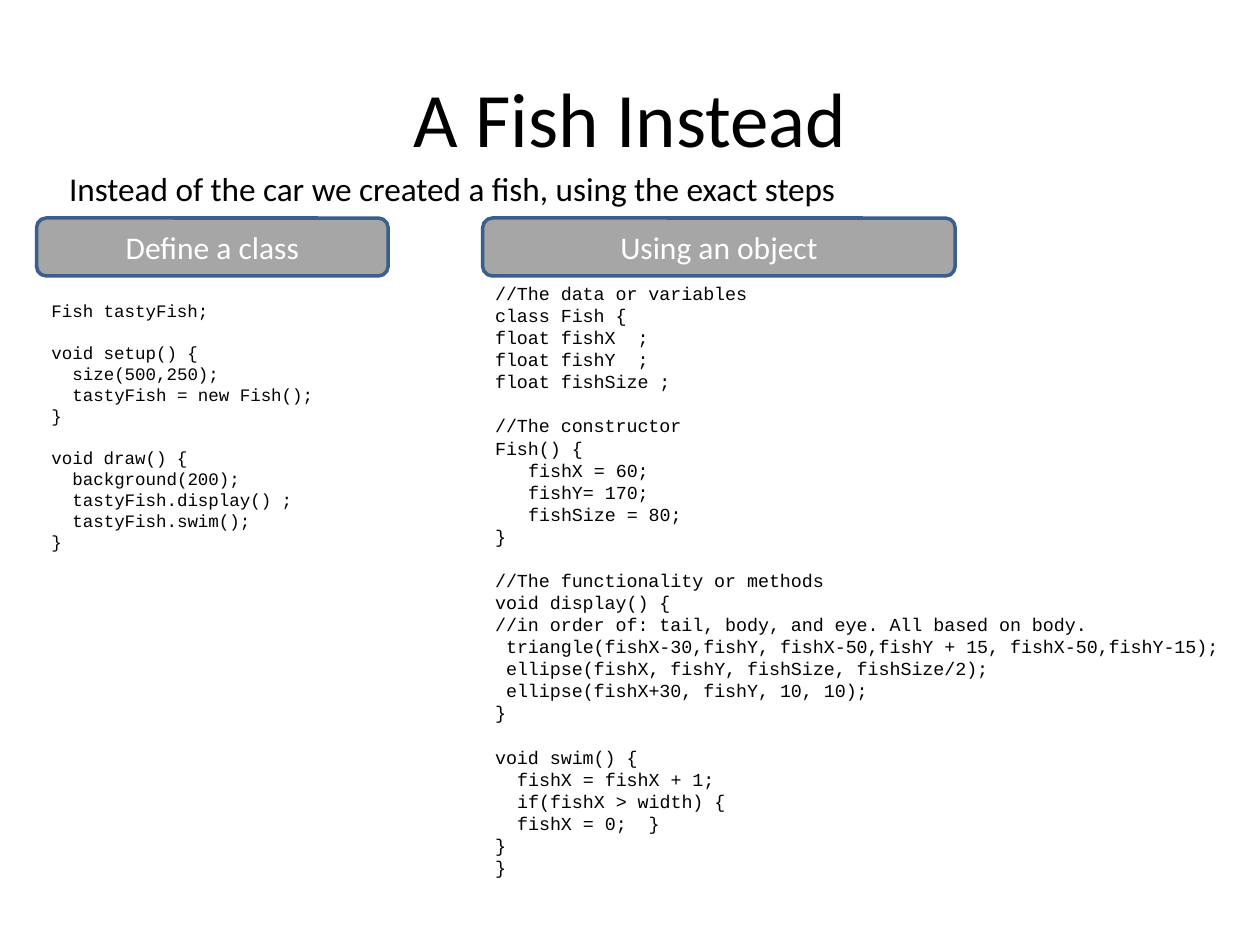
from pptx import Presentation
from pptx.dml.color import RGBColor
from pptx.enum.shapes import MSO_SHAPE
from pptx.enum.text import MSO_ANCHOR, PP_ALIGN
from pptx.util import Pt

ROUNDED = MSO_SHAPE.ROUNDED_RECTANGLE
CENTER, LEFT = PP_ALIGN.CENTER, PP_ALIGN.LEFT
MIDDLE, TOP = MSO_ANCHOR.MIDDLE, MSO_ANCHOR.TOP
BLACK, WHITE, GRAY, BLUE = "000000", "FFFFFF", "A6A6A6", "3A5F8C"
LINE_RATIO, CHAR_RATIO = 1.2, 0.6

TITLE = "A Fish Instead"
INTRO = "Instead of the car we created a fish, using the exact steps"
SKETCH = """Fish tastyFish;

void setup() {
  size(500,250);
  tastyFish = new Fish();
}

void draw() {
  background(200);
  tastyFish.display() ;
  tastyFish.swim();
}"""
FISH_CLASS = """//The data or variables
class Fish {
float fishX  ;
float fishY  ;
float fishSize ;

//The constructor
Fish() {
   fishX = 60;
   fishY= 170;
   fishSize = 80;
}

//The functionality or methods
void display() {
//in order of: tail, body, and eye. All based on body.
 triangle(fishX-30,fishY, fishX-50,fishY + 15, fishX-50,fishY-15);
 ellipse(fishX, fishY, fishSize, fishSize/2);
 ellipse(fishX+30, fishY, 10, 10);
}

void swim() {
  fishX = fishX + 1;
  if(fishX > width) {
  fishX = 0;  }
}
}"""
HEADERS = [("Define a class", 20.9, 200.9), ("Using an object", 275.8, 270)]
LISTINGS = [
    (SKETCH, (22.3, 167.8, 219.6, 152.6), 10),
    (FISH_CLASS, (275.8, 157.7, 432.7, 350.6), 10.5),
]


def rgb(color):
    """Turn a hex string into a colour."""
    return RGBColor.from_string(color)


def write(p, text, size, font="Calibri", color=BLACK, align=LEFT):
    """Put one formatted run into a paragraph."""
    p.alignment = align
    r = p.add_run()
    r.text = text
    r.font.size, r.font.name = Pt(size), font
    r.font.color.rgb = rgb(color)


def add_text(s, box, anchor=TOP):
    """Add a wrapping text box and return its frame."""
    tf = s.shapes.add_textbox(*map(Pt, box)).text_frame
    tf.word_wrap, tf.vertical_anchor = True, anchor
    return tf


def add_header(s, text, left, width):
    """Add a rounded column header."""
    sp = s.shapes.add_shape(ROUNDED, Pt(left), Pt(124.6), Pt(width), Pt(33.1))
    sp.shadow.inherit = False
    sp.fill.solid()
    sp.fill.fore_color.rgb = rgb(GRAY)
    sp.line.color.rgb, sp.line.width = rgb(BLUE), Pt(2)
    tf = sp.text_frame
    tf.vertical_anchor = MIDDLE
    write(tf.paragraphs[0], text, 18, color=WHITE, align=CENTER)


def add_listing(s, code, box, size):
    """Add code with indents and a one-line gap between blocks."""
    tf = add_text(s, box)
    pitch = Pt(size * LINE_RATIO)
    for b, block in enumerate(code.split("\n\n")):
        for i, line in enumerate(block.split("\n")):
            p = tf.add_paragraph() if b or i else tf.paragraphs[0]
            p.line_spacing = pitch
            p.space_before = pitch if b and not i else Pt(0)
            text = line.lstrip()
            indent = Pt((len(line) - len(text)) * size * CHAR_RATIO)
            p._p.get_or_add_pPr().set("marL", str(int(indent)))
            write(p, text, size, font="Courier New")


def main():
    """Build and save the slide."""
    prs = Presentation()
    prs.slide_width, prs.slide_height = Pt(720), Pt(540)
    s = prs.slides.add_slide(prs.slide_layouts[6])
    title = add_text(s, (36, 21.6, 648, 90), MIDDLE)
    write(title.paragraphs[0], TITLE, 44, align=CENTER)
    for code, box, size in LISTINGS:
        add_listing(s, code, box, size)
    intro = add_text(s, (32.4, 92.9, 653.8, 30.2))
    write(intro.paragraphs[0], INTRO, 19)
    for text, left, width in HEADERS:
        add_header(s, text, left, width)
    prs.save("out.pptx")


if __name__ == "__main__":
    main()
